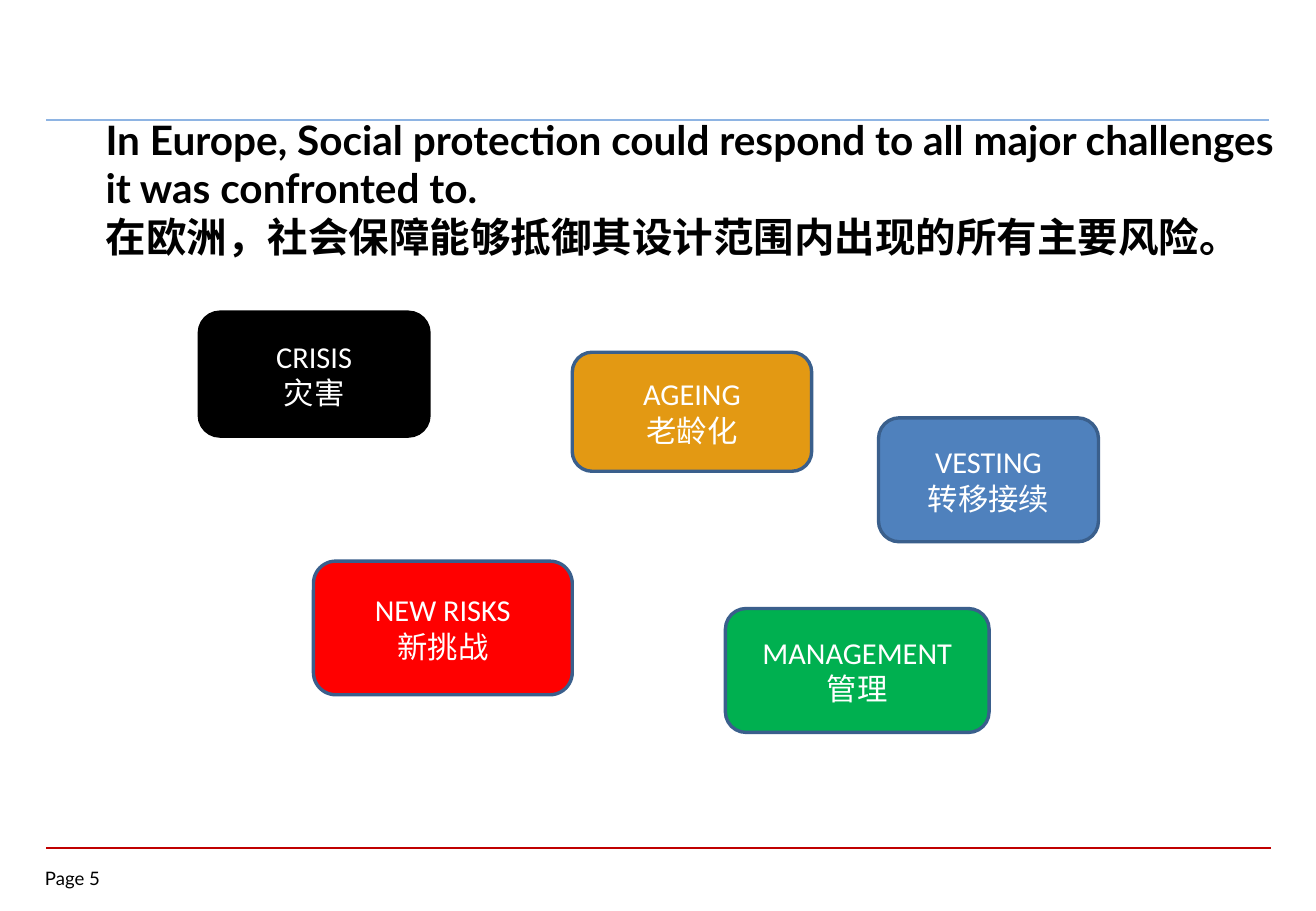
from lxml.etree import SubElement
from pptx import Presentation
from pptx.dml.color import RGBColor
from pptx.enum.shapes import MSO_CONNECTOR, MSO_SHAPE
from pptx.enum.text import MSO_ANCHOR, PP_ALIGN
from pptx.oxml.ns import qn
from pptx.util import Inches, Pt

BLACK = RGBColor(0x00, 0x00, 0x00)
WHITE = RGBColor(0xFF, 0xFF, 0xFF)
RED = RGBColor(0xFF, 0x00, 0x00)
DARK_RED = RGBColor(0xC0, 0x00, 0x00)
LIGHT_BLUE = RGBColor(0x8E, 0xB4, 0xE3)
BLUE = RGBColor(0x4F, 0x81, 0xBD)
OUTLINE_BLUE = RGBColor(0x3A, 0x5F, 0x8C)
ORANGE = RGBColor(0xE3, 0x99, 0x13)
GREEN = RGBColor(0x00, 0xB0, 0x50)

TITLE = (
    "In Europe, Social protection could respond to all major challenges it was confronted to.",
    "在欧洲，社会保障能够抵御其设计范围内出现的所有主要风险。",
)
CHALLENGES = (
    (("CRISIS", "灾害"), (1.64, 2.57, 1.89, 1.02), BLACK, BLACK),
    (("VESTING", "转移接续"), (7.23, 3.44, 1.81, 1.02), BLUE, OUTLINE_BLUE),
    (("NEW RISKS", "新挑战"), (2.58, 4.62, 2.13, 1.1), RED, OUTLINE_BLUE),
    (("AGEING", "老龄化"), (4.71, 2.9, 1.97, 0.98), ORANGE, OUTLINE_BLUE),
    (("MANAGEMENT", "管理"), (5.97, 5.01, 2.17, 1.02), GREEN, OUTLINE_BLUE),
)


class SlideBuilder:
    text_font = "Lato"
    box_font = "Calibri"

    def __init__(self, slide):
        self.slide = slide

    def add_lines(self, frame, lines, font_name, size, color, bold=False, alignment=PP_ALIGN.LEFT):
        for index, line in enumerate(lines):
            paragraph = frame.add_paragraph() if index else frame.paragraphs[0]
            paragraph.alignment = alignment
            run = paragraph.add_run()
            run.text = line
            run.font.name = font_name
            run.font.size = Pt(size)
            run.font.bold = bold
            run.font.color.rgb = color

    def rule(self, left, right, top, color, width):
        connector = self.slide.shapes.add_connector(
            MSO_CONNECTOR.STRAIGHT, Inches(left), Inches(top), Inches(right), Inches(top)
        )
        connector.line.color.rgb = color
        connector.line.width = Pt(width)
        SubElement(connector._element.spPr, qn("a:effectLst"))

    def text(self, lines, place, size, bold=False, anchor=MSO_ANCHOR.TOP, margins=(0, 0)):
        shape = self.slide.shapes.add_textbox(*map(Inches, place))
        frame = shape.text_frame
        frame.word_wrap = True
        frame.vertical_anchor = anchor
        horizontal, vertical = map(Inches, margins)
        frame.margin_left = frame.margin_right = horizontal
        frame.margin_top = frame.margin_bottom = vertical
        self.add_lines(frame, lines, self.text_font, size, BLACK, bold)

    def challenge(self, lines, place, fill, outline):
        shape = self.slide.shapes.add_shape(MSO_SHAPE.ROUNDED_RECTANGLE, *map(Inches, place))
        shape.shadow.inherit = False
        shape.fill.solid()
        shape.fill.fore_color.rgb = fill
        shape.line.color.rgb = outline
        shape.line.width = Pt(2)
        frame = shape.text_frame
        frame.word_wrap = True
        frame.vertical_anchor = MSO_ANCHOR.MIDDLE
        self.add_lines(frame, lines, self.box_font, 18, WHITE, alignment=PP_ALIGN.CENTER)


def main():
    presentation = Presentation()
    presentation.slide_width = Inches(10.83)
    presentation.slide_height = Inches(7.5)
    builder = SlideBuilder(presentation.slides.add_slide(presentation.slide_layouts[6]))

    builder.rule(0.38, 10.46, 6.98, DARK_RED, 1)
    builder.rule(0.38, 10.44, 0.99, LIGHT_BLUE, 1.5)
    builder.text(("Page 5",), (0.37, 7.14, 0.73, 0.22), 11)
    builder.text(TITLE, (0.77, 1.19, 9.92, 0.71), 24, True, MSO_ANCHOR.MIDDLE, (0.1, 0.05))
    for challenge in CHALLENGES:
        builder.challenge(*challenge)

    presentation.save("out.pptx")


if __name__ == "__main__":
    main()
